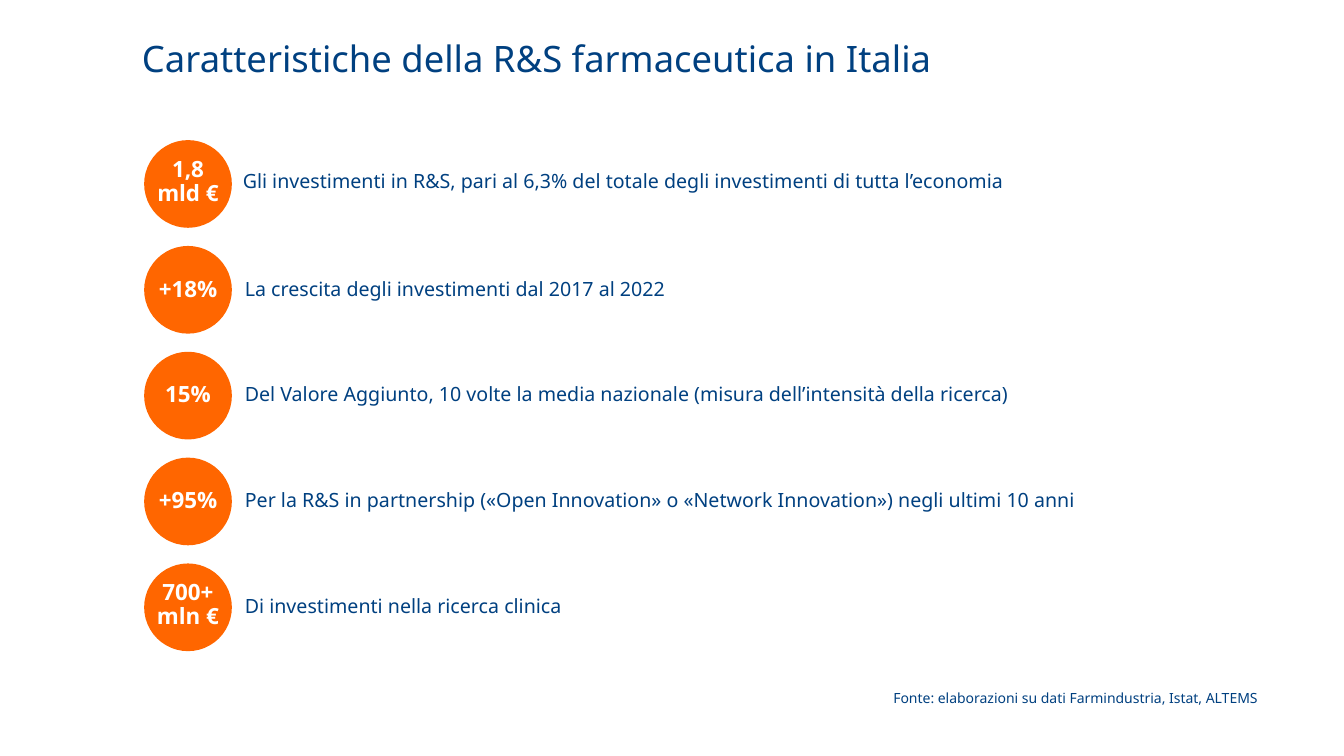
"""Build a slide on the traits of pharmaceutical R&D in Italy."""
from dataclasses import dataclass

from pptx import Presentation
from pptx.dml.color import RGBColor as Rgb
from pptx.enum.shapes import MSO_SHAPE as Kind
from pptx.enum.text import MSO_ANCHOR as Anchor, PP_ALIGN as Align
from pptx.slide import Slide
from pptx.util import Inches, Pt

HUES = {"navy": "004080", "orange": "FF6600", "white": "FFFFFF"}
FONT = "Noto Sans"
TOP, STEP, SIZE = 1.39, 1.05, 0.87


@dataclass
class Fact:
    value: str
    text: str
    high: float = 0.37
    left: float = 2.33
    drop: float = 0.28


@dataclass
class Label:
    text: str
    left: float
    top: float
    wide: float
    high: float
    size: int
    hue: str = "navy"
    bold: bool = False
    align: Align = Align.LEFT
    anchor: Anchor = Anchor.TOP


FACTS = [
    Fact("1,8 mld €", "Gli investimenti in R&S, pari al 6,3% del totale "
         "degli investimenti di tutta l’economia", 0.64, 2.31, 0.26),
    Fact("+18%", "La crescita degli investimenti dal 2017 al 2022"),
    Fact("15%", "Del Valore Aggiunto, 10 volte la media nazionale "
         "(misura dell’intensità della ricerca)"),
    Fact("+95%", "Per la R&S in partnership («Open Innovation» o "
         "«Network Innovation») negli ultimi 10 anni"),
    Fact("700+ mln €", "Di investimenti nella ricerca clinica", 0.64),
]


def add_label(slide: Slide, label: Label) -> None:
    box = slide.shapes.add_textbox(Inches(label.left), Inches(label.top),
                                   Inches(label.wide), Inches(label.high))
    frame = box.text_frame
    frame.word_wrap = True
    frame.vertical_anchor = label.anchor
    frame.text = label.text
    para = frame.paragraphs[0]
    para.alignment = label.align
    para.line_spacing = 0.9
    font = para.runs[0].font
    font.name, font.size, font.bold = FONT, Pt(label.size), label.bold
    font.color.rgb = Rgb.from_string(HUES[label.hue])


def add_fact(slide: Slide, fact: Fact, top: float) -> None:
    disc = slide.shapes.add_shape(Kind.OVAL, Inches(1.43), Inches(top),
                                  Inches(SIZE), Inches(SIZE))
    disc.shadow.inherit = False
    disc.fill.solid()
    disc.fill.fore_color.rgb = Rgb.from_string(HUES["orange"])
    disc.line.fill.background()
    lift = 0.02 if fact.high > 0.5 else 0
    inner = top + (SIZE - fact.high) / 2 - lift
    add_label(slide, Label(fact.value, 1.4, inner, 0.93, fact.high, 16,
                           "white", True, Align.CENTER, Anchor.MIDDLE))
    add_label(slide, Label(fact.text, fact.left, top + fact.drop,
                           9.54, 0.34, 14))


def main() -> None:
    deck = Presentation()
    deck.slide_width, deck.slide_height = Inches(13.33), Inches(7.5)
    slide = deck.slides.add_slide(deck.slide_layouts[6])
    add_label(slide, Label("Caratteristiche della R&S farmaceutica in Italia",
                           1.31, 0.36, 10.09, 0.7, 26))
    for row, fact in enumerate(FACTS):
        add_fact(slide, fact, TOP + row * STEP)
    add_label(slide, Label("Fonte: elaborazioni su dati Farmindustria, Istat, "
                           "ALTEMS", 5.37, 6.81, 7.2, 0.27, 10,
                           align=Align.RIGHT))
    deck.save("out.pptx")


if __name__ == "__main__":
    main()
